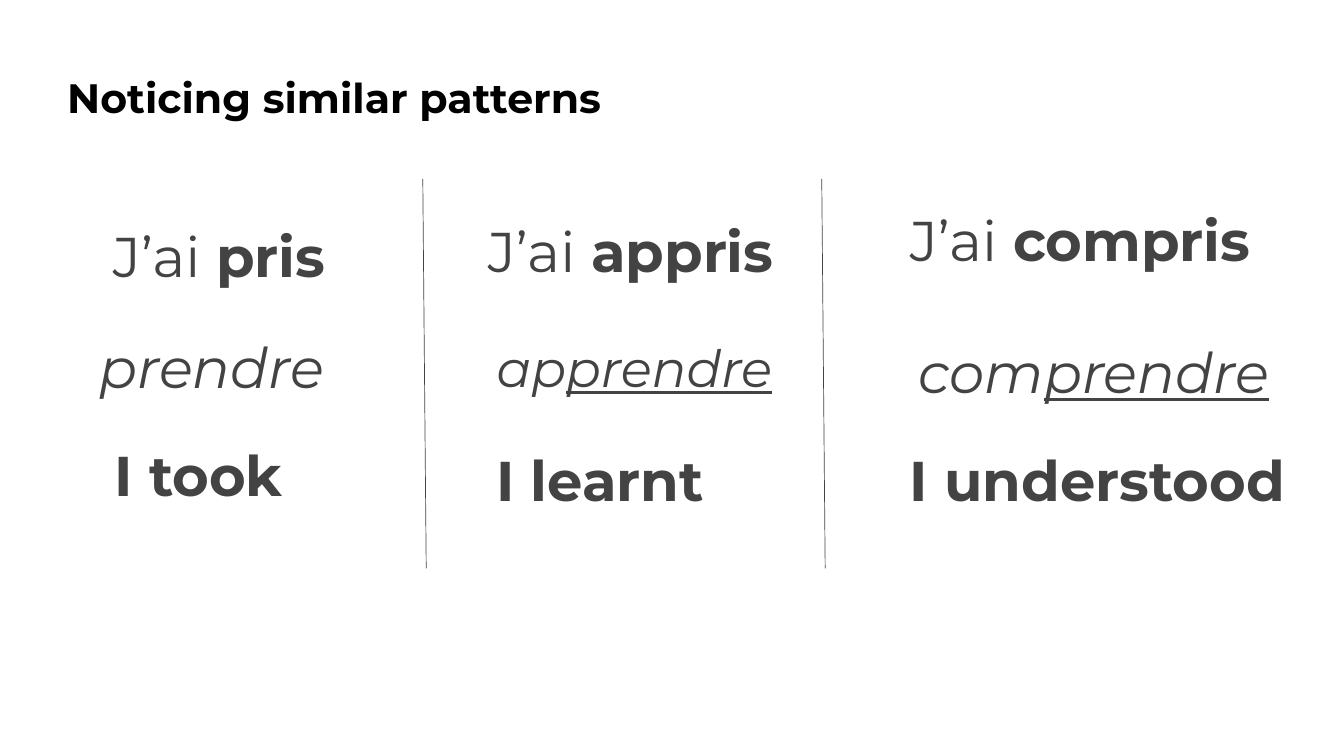
"""Build a slide comparing the past tense of prendre, apprendre and comprendre."""
from lxml import etree
from pptx import Presentation
from pptx.dml.color import RGBColor
from pptx.enum.shapes import MSO_CONNECTOR
from pptx.oxml.ns import qn
from pptx.util import Cm, Pt

STRAIGHT = MSO_CONNECTOR.STRAIGHT
FONT, BLACK, GREY = "Montserrat", "000000", "434343"
PLAIN, BOLD, ITALIC, UNDERLINED = "", "b", "i", "iu"

TITLE = [("Noticing similar patterns", BOLD)]
VERBS = [
    [
        (4.27, 7.62, 8.26, 60, [("J’ai", PLAIN), (" pris", BOLD)]),
        (3.76, 11.81, 9.4, 60, [("prendre", ITALIC)]),
        (4.34, 15.88, 8.26, 60, [("I took", BOLD)]),
    ],
    [
        (18.44, 7.44, 12.67, 60, [("J’ai", PLAIN), (" appris", BOLD)]),
        (18.77, 12.01, 12.67, 55, [("ap", ITALIC), ("prendre", UNDERLINED)]),
        (18.77, 16.08, 8.26, 60, [("I learnt", BOLD)]),
    ],
    [
        (34.39, 6.99, 14.3, 60, [("J’ai", PLAIN), (" compris", BOLD)]),
        (34.72, 12.01, 13.54, 60, [("com", ITALIC), ("prendre", UNDERLINED)]),
        (34.39, 16.08, 16.41, 60, [("I understood", BOLD)]),
    ],
]
PHRASE_HEIGHT = 3.38
DIVIDERS = [15.98, 31.06]
DIVIDER_TOP, DIVIDER_BOTTOM, DIVIDER_SLANT = 6.76, 21.49, 0.13


def rgb(value):
    return RGBColor.from_string(value)


def add_phrase(slide, left, top, width, height, size, parts, color, spacing, after):
    box = slide.shapes.add_textbox(Cm(left), Cm(top), Cm(width), Cm(height))
    frame = box.text_frame
    frame.word_wrap = True
    frame.margin_left = frame.margin_top = frame.margin_right = frame.margin_bottom = 0
    phrase = frame.paragraphs[0]
    phrase.line_spacing = spacing
    phrase.space_after = Pt(after)
    phrase.font.name = FONT
    phrase.font.size = Pt(size)
    phrase.font.color.rgb = rgb(color)
    for words, style in parts:
        part = phrase.add_run()
        part.text = words
        part.font.bold = "b" in style
        part.font.italic = "i" in style
        part.font.underline = "u" in style


def add_divider(slide, x):
    divider = slide.shapes.add_connector(
        STRAIGHT, Cm(x), Cm(DIVIDER_TOP), Cm(x + DIVIDER_SLANT), Cm(DIVIDER_BOTTOM)
    )
    divider.line.color.rgb = rgb(GREY)
    divider.line.width = Pt(0.75)
    etree.SubElement(divider._element.spPr, qn("a:effectLst"))


def main():
    deck = Presentation()
    deck.slide_width, deck.slide_height = Cm(50.8), Cm(28.58)
    slide = deck.slides.add_slide(deck.slide_layouts[6])
    add_phrase(slide, 2.54, 2.46, 36.68, 4.52, 44, TITLE, BLACK, 1.15, 0)
    for verb in VERBS:
        for left, top, width, size, parts in verb:
            add_phrase(slide, left, top, width, PHRASE_HEIGHT, size, parts, GREY, 1.3, 20)
    for x in DIVIDERS:
        add_divider(slide, x)
    deck.save("out.pptx")


if __name__ == "__main__":
    main()
